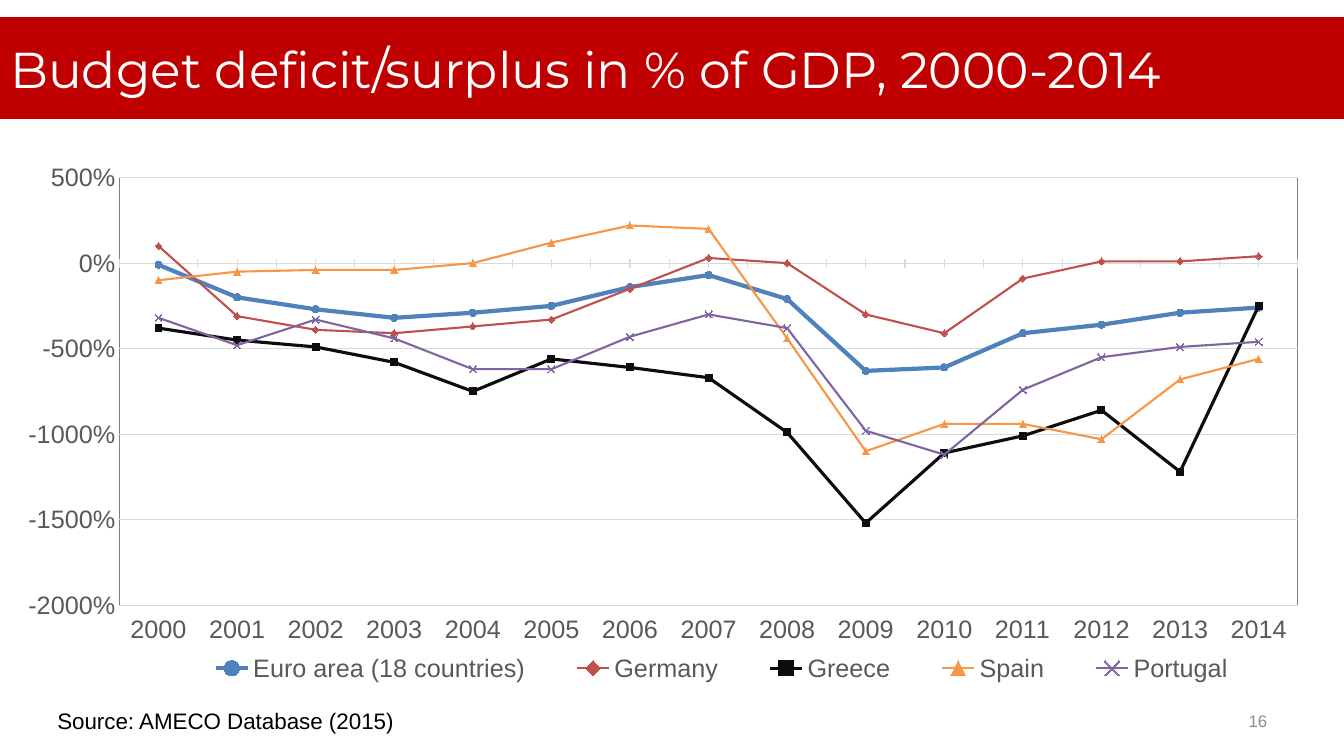
from dataclasses import dataclass

import lxml.etree
import pptx
import pptx.chart.data
import pptx.dml.color
import pptx.enum.chart
import pptx.enum.text
import pptx.oxml
import pptx.oxml.ns
import pptx.util

Pt = pptx.util.Pt
qn = pptx.oxml.ns.qn
Marker = pptx.enum.chart.XL_MARKER_STYLE
Tick = pptx.enum.chart.XL_TICK_MARK


@dataclass(frozen=True)
class Theme:
    """Colours, fonts and type sizes of the slide."""
    banner: str = "C00000"
    white: str = "FFFFFF"
    black: str = "000000"
    label: str = "595959"
    grid: str = "D9D9D9"
    frame: str = "808080"
    number: str = "8C8C8C"
    heading_font: str = "Montserrat"
    body_font: str = "Arial"
    title_size: int = 36
    chart_size: int = 18
    source_size: int = 16
    number_size: int = 12


THEME = Theme()
FIRST_NUMBER = 16
YEARS = [str(year) for year in range(2000, 2015)]
SERIES = [
    ("Euro area (18 countries)", "4F81BD", 3, Marker.CIRCLE,
     [-0.1, -2, -2.7, -3.2, -2.9, -2.5, -1.4, -0.7, -2.1, -6.3, -6.1, -4.1, -3.6, -2.9, -2.6]),
    ("Germany", "C0504D", 1.5, Marker.DIAMOND,
     [1, -3.1, -3.9, -4.1, -3.7, -3.3, -1.5, 0.3, 0, -3, -4.1, -0.9, 0.1, 0.1, 0.4]),
    ("Greece", "0D0D0D", 2.25, Marker.SQUARE,
     [-3.8, -4.5, -4.9, -5.8, -7.5, -5.6, -6.1, -6.7, -9.9, -15.2, -11.1, -10.1, -8.6, -12.2, -2.5]),
    ("Spain", "F79646", 1.5, Marker.TRIANGLE,
     [-1, -0.5, -0.4, -0.4, 0, 1.2, 2.2, 2, -4.4, -11, -9.4, -9.4, -10.3, -6.8, -5.6]),
    ("Portugal", "8064A2", 1.5, Marker.X,
     [-3.2, -4.8, -3.3, -4.4, -6.2, -6.2, -4.3, -3, -3.8, -9.8, -11.2, -7.4, -5.5, -4.9, -4.6]),
]


def rgb(color):
    """Return an RGB colour from its hex code."""
    return pptx.dml.color.RGBColor.from_string(color)


def style_font(font, size, color, name=THEME.body_font):
    """Set size, colour and typeface of a font."""
    font.size, font.name = Pt(size), name
    font.color.rgb = rgb(color)


def style_line(line, color, width=0.75):
    """Set colour and width of a line."""
    line.color.rgb = rgb(color)
    line.width = Pt(width)


def set_layout(parent, index, x, y, w, h, inner=False):
    """Place a chart part by fractions of the chart area."""
    for old in parent.findall(qn("c:layout")):
        parent.remove(old)
    layout = lxml.etree.Element(qn("c:layout"))
    manual = lxml.etree.SubElement(layout, qn("c:manualLayout"))
    values = {"layoutTarget": "inner"} if inner else {}
    values.update(xMode="edge", yMode="edge", x=x, y=y, w=w, h=h)
    for tag, value in values.items():
        lxml.etree.SubElement(manual, qn("c:" + tag)).set("val", str(value))
    parent.insert(index, layout)


def add_banner(slide, x, y, w, h):
    """Turn the title placeholder into a full-width red band."""
    sp = slide.shapes.title
    sp.left, sp.top, sp.width, sp.height = Pt(x), Pt(y), Pt(w), Pt(h)
    sp.fill.solid()
    sp.fill.fore_color.rgb = rgb(THEME.banner)
    tf = sp.text_frame
    tf.text = "Budget deficit/surplus in % of GDP, 2000-2014"
    tf.vertical_anchor = pptx.enum.text.MSO_ANCHOR.MIDDLE
    tf.auto_size = pptx.enum.text.MSO_AUTO_SIZE.NONE
    p = tf.paragraphs[0]
    p.alignment = pptx.enum.text.PP_ALIGN.LEFT
    style_font(p.runs[0].font, THEME.title_size, THEME.white, THEME.heading_font)


def style_axes(chart):
    """Format both axes, the gridlines and the plot frame."""
    cat, val = chart.category_axis, chart.value_axis
    for axis in (cat, val):
        axis.major_tick_mark = axis.minor_tick_mark = Tick.NONE
        style_font(axis.tick_labels.font, THEME.chart_size, THEME.label)
    cat.minor_tick_mark = Tick.CROSS
    cat.tick_label_position = pptx.enum.chart.XL_TICK_LABEL_POSITION.LOW
    style_line(cat.format.line, THEME.grid)
    val.minimum_scale, val.maximum_scale, val.major_unit = -20, 5, 5
    val.tick_labels.number_format = "0%"
    val.tick_labels.number_format_is_linked = False
    val.format.line.fill.background()
    style_line(val.major_gridlines.format.line, THEME.grid)
    plot_area = cat._element.getparent()
    set_layout(plot_area, 0, 0.09, 0.05, 0.89, 0.78, inner=True)
    plot_area.append(pptx.oxml.parse_xml(
        f'<c:spPr {pptx.oxml.ns.nsdecls("c", "a")}><a:noFill/><a:ln w="9525">'
        f'<a:solidFill><a:srgbClr val="{THEME.frame}"/></a:solidFill></a:ln></c:spPr>'))


def add_deficit_chart(slide, x, y, w, h):
    """Add the line chart of budget balances by country."""
    data = pptx.chart.data.CategoryChartData(number_format="0%")
    data.categories = YEARS
    for name, _, _, _, values in SERIES:
        data.add_series(name, values)
    chart = slide.shapes.add_chart(
        pptx.enum.chart.XL_CHART_TYPE.LINE_MARKERS, Pt(x), Pt(y), Pt(w), Pt(h), data).chart
    chart.has_title = False
    style_font(chart.font, THEME.chart_size, THEME.black)
    chart.plots[0].vary_by_categories = False
    for s, (_, color, width, marker, _) in zip(chart.plots[0].series, SERIES):
        s.smooth = False
        style_line(s.format.line, color, width)
        s.marker.style, s.marker.size = marker, 5
        style_line(s.marker.format.line, color)
        if marker == Marker.X:
            s.marker.format.fill.background()
        else:
            s.marker.format.fill.solid()
            s.marker.format.fill.fore_color.rgb = rgb(color)
    style_axes(chart)
    chart.has_legend = True
    legend = chart.legend
    legend.position = pptx.enum.chart.XL_LEGEND_POSITION.BOTTOM
    legend.include_in_layout = False
    style_font(legend.font, THEME.chart_size, THEME.label)
    set_layout(legend._element, 1, 0.13, 0.9, 0.83, 0.09)


def add_source(slide, x, y, w, h):
    """Add the source line."""
    tf = slide.shapes.add_textbox(Pt(x), Pt(y), Pt(w), Pt(h)).text_frame
    tf.word_wrap = True
    tf.text = "Source: AMECO Database (2015)"
    style_font(tf.paragraphs[0].runs[0].font, THEME.source_size, THEME.black)


def add_slide_number(slide, x, y, w, h):
    """Add a right-aligned slide number field."""
    tf = slide.shapes.add_textbox(Pt(x), Pt(y), Pt(w), Pt(h)).text_frame
    tf.word_wrap = True
    tf.vertical_anchor = pptx.enum.text.MSO_ANCHOR.MIDDLE
    p = tf.paragraphs[0]
    p.text = str(FIRST_NUMBER)
    p.alignment = pptx.enum.text.PP_ALIGN.RIGHT
    style_font(p.runs[0].font, THEME.number_size, THEME.number)
    r = p.runs[0]._r
    r.tag = qn("a:fld")
    r.set("id", "{B6F15528-21DE-4FAA-801E-634DDDAF4B2B}")
    r.set("type", "slidenum")


def main():
    """Build and save the slide."""
    prs = pptx.Presentation()
    prs.slide_width, prs.slide_height = Pt(960), Pt(540)
    prs.element.set("firstSlideNum", str(FIRST_NUMBER))
    slide = prs.slides.add_slide(prs.slide_layouts[5])
    add_banner(slide, 0, 12.24, 960, 72.72)
    add_deficit_chart(slide, 0, 107.28, 946.08, 391.68)
    add_source(slide, 33.84, 501.84, 828, 26.64)
    add_slide_number(slide, 688.32, 500.4, 223.92, 28.8)
    prs.save("out.pptx")


if __name__ == "__main__":
    main()
